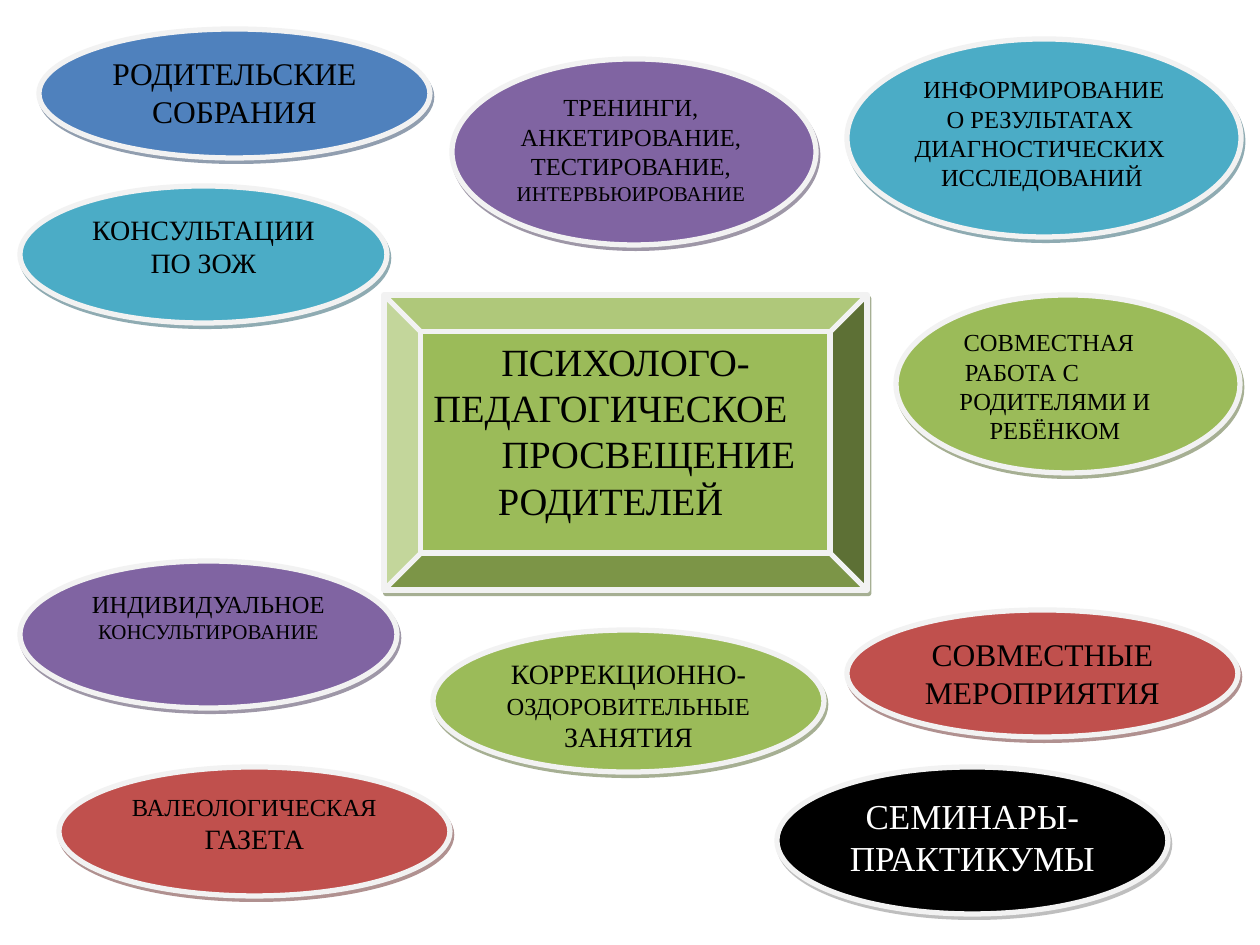
from dataclasses import dataclass

from lxml import etree
from pptx import Presentation
from pptx.dml.color import RGBColor
from pptx.enum.shapes import MSO_SHAPE
from pptx.enum.text import MSO_ANCHOR, PP_ALIGN
from pptx.oxml.ns import qn
from pptx.util import Emu, Pt

OVAL, BEVEL = MSO_SHAPE.OVAL, MSO_SHAPE.BEVEL
CENTER, TOP = PP_ALIGN.CENTER, MSO_ANCHOR.TOP

FONT = "Times New Roman"
BLACK = RGBColor(0x00, 0x00, 0x00)
WHITE = RGBColor(0xFF, 0xFF, 0xFF)
RIM = RGBColor(0xF2, 0xF2, 0xF2)
BLUE = RGBColor(0x4F, 0x81, 0xBD)
TEAL = RGBColor(0x4B, 0xAC, 0xC6)
PURPLE = RGBColor(0x80, 0x64, 0xA2)
RED = RGBColor(0xC0, 0x50, 0x4D)
GREEN = RGBColor(0x9B, 0xBB, 0x59)

# Shadow colour for each fill
SHADE = {
    BLUE: RGBColor(0x24, 0x3F, 0x60),
    TEAL: RGBColor(0x20, 0x58, 0x67),
    PURPLE: RGBColor(0x3F, 0x31, 0x51),
    RED: RGBColor(0x62, 0x24, 0x23),
    GREEN: RGBColor(0x4E, 0x61, 0x28),
    BLACK: RGBColor(0x7F, 0x7F, 0x7F),
}


def px(n: int) -> Emu:
    """Turn px (126 to the inch) into EMU."""
    return Emu(round(n * 914400 / 126))


@dataclass(frozen=True)
class Line:
    text: str
    size: int
    shift: int = 0  # px off the centre, positive to the right


@dataclass(frozen=True)
class Topic:
    left: int
    top: int
    width: int
    height: int
    fill: RGBColor
    lines: tuple[Line, ...]
    ink: RGBColor = BLACK
    kind: MSO_SHAPE = OVAL


TOPICS = (
    # Central theme
    Topic(384, 295, 483, 295, GREEN, (
        Line("ПСИХОЛОГО-", 22), Line("ПЕДАГОГИЧЕСКОЕ", 22, -15),
        Line("ПРОСВЕЩЕНИЕ", 22, 38), Line("РОДИТЕЛЕЙ", 22)), kind=BEVEL),
    # Left side
    Topic(39, 29, 391, 129, BLUE, (Line("РОДИТЕЛЬСКИЕ СОБРАНИЯ", 18),)),
    Topic(20, 186, 367, 137, TEAL, (Line("КОНСУЛЬТАЦИИ ПО ЗОЖ", 16),)),
    Topic(20, 561, 377, 147, PURPLE, (
        Line("ИНДИВИДУАЛЬНОЕ", 14), Line("КОНСУЛЬТИРОВАНИЕ", 12))),
    Topic(59, 767, 391, 129, RED, (
        Line("ВАЛЕОЛОГИЧЕСКАЯ", 14), Line("ГАЗЕТА", 16))),
    # Middle
    Topic(452, 59, 364, 186, PURPLE, (
        Line("ТРЕНИНГИ,", 14, -3), Line("АНКЕТИРОВАНИЕ,", 14),
        Line("ТЕСТИРОВАНИЕ,", 14), Line("ИНТЕРВЬЮИРОВАНИЕ", 12))),
    Topic(433, 630, 391, 142, GREEN, (
        Line("КОРРЕКЦИОННО-", 16), Line("ОЗДОРОВИТЕЛЬНЫЕ", 14),
        Line("ЗАНЯТИЯ", 16))),
    # Right side
    Topic(847, 39, 394, 198, TEAL, (
        Line("ИНФОРМИРОВАНИЕ", 14), Line("О РЕЗУЛЬТАТАХ", 14, -4),
        Line("ДИАГНОСТИЧЕСКИХ", 14), Line("ИССЛЕДОВАНИЙ", 14, 2))),
    Topic(896, 295, 344, 178, GREEN, (
        Line("СОВМЕСТНАЯ", 14, -19), Line("РАБОТА С", 14, -46),
        Line("РОДИТЕЛЯМИ И", 14, -13), Line("РЕБЁНКОМ", 14))),
    Topic(847, 610, 391, 127, RED, (Line("СОВМЕСТНЫЕ МЕРОПРИЯТИЯ", 18),)),
    Topic(777, 767, 391, 147, BLACK, (Line("СЕМИНАРЫ-ПРАКТИКУМЫ", 20),), WHITE),
)


def cast(shape, color: RGBColor) -> None:
    """Give the shape a hard, half-clear shadow."""
    shape.shadow.inherit = False
    effects = shape._element.spPr.find(qn("a:effectLst"))
    outer = etree.SubElement(effects, qn("a:outerShdw"), blurRad="0",
                             dist=str(Pt(2.2)), dir=str(63 * 60000),
                             algn="ctr", rotWithShape="0")
    tone = etree.SubElement(outer, qn("a:srgbClr"), val=str(color))
    etree.SubElement(tone, qn("a:alpha"), val="50000")


def write(frame, lines: tuple[Line, ...], ink: RGBColor) -> None:
    """Write centred lines, moved sideways by a one-sided indent."""
    frame.word_wrap = True
    frame.vertical_anchor = TOP
    frame.margin_left = frame.margin_right = 0
    for i, line in enumerate(lines):
        par = frame.add_paragraph() if i else frame.paragraphs[0]
        par.text = line.text
        par.alignment = CENTER
        par.font.name = FONT
        par.font.size = Pt(line.size)
        par.font.color.rgb = ink
        if line.shift:
            side = "marL" if line.shift > 0 else "marR"
            par._p.get_or_add_pPr().set(side, str(px(2 * abs(line.shift))))


def draw(slide, topic: Topic) -> None:
    """Draw one topic with its rim, shadow and text."""
    box = map(px, (topic.left, topic.top, topic.width, topic.height))
    shape = slide.shapes.add_shape(topic.kind, *box)
    shape.fill.solid()
    shape.fill.fore_color.rgb = topic.fill
    shape.line.color.rgb = RIM
    shape.line.width = Pt(3)
    cast(shape, SHADE[topic.fill])
    write(shape.text_frame, topic.lines, topic.ink)


def main() -> None:
    deck = Presentation()
    deck.slide_width, deck.slide_height = px(1260), px(945)
    slide = deck.slides.add_slide(deck.slide_layouts[6])
    for topic in TOPICS:
        draw(slide, topic)
    deck.save("out.pptx")


if __name__ == "__main__":
    main()
